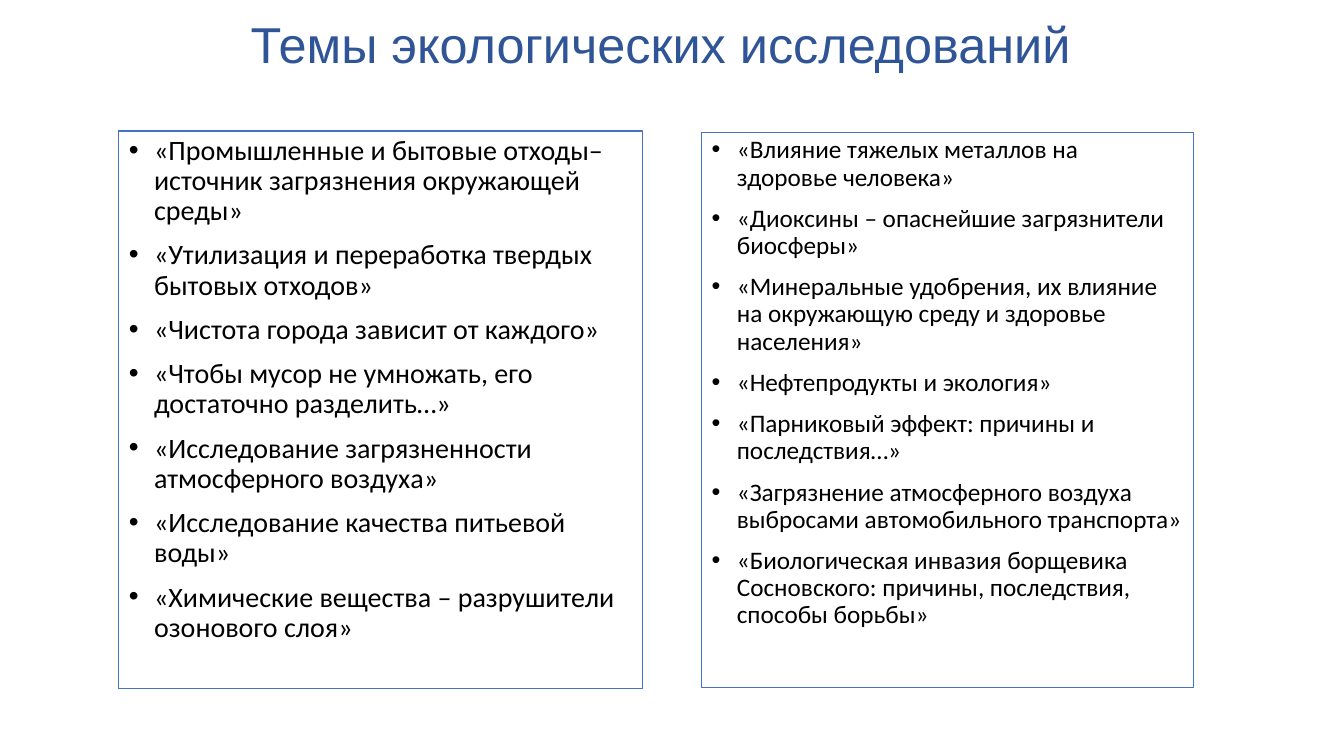
from lxml.etree import SubElement
from pptx import Presentation
from pptx.dml.color import RGBColor
from pptx.enum.text import MSO_ANCHOR as Anchor, PP_ALIGN as Align
from pptx.oxml.ns import qn
from pptx.util import Inches, Pt

WASTE_TOPICS = [
    "«Промышленные и бытовые отходы– источник загрязнения окружающей среды»",
    "«Утилизация и переработка твердых бытовых отходов»",
    "«Чистота города зависит от каждого»",
    "«Чтобы мусор не умножать, его достаточно разделить…»",
    "«Исследование загрязненности атмосферного воздуха»",
    "«Исследование качества питьевой воды»",
    "«Химические вещества – разрушители озонового слоя»",
]
POLLUTION_TOPICS = [
    "«Влияние тяжелых металлов на здоровье человека»",
    "«Диоксины – опаснейшие загрязнители биосферы»",
    "«Минеральные удобрения, их влияние на окружающую среду и здоровье населения»",
    "«Нефтепродукты и экология»",
    "«Парниковый эффект: причины и последствия…»",
    "«Загрязнение атмосферного воздуха выбросами автомобильного транспорта»",
    "«Биологическая инвазия борщевика Сосновского: причины, последствия, способы борьбы»",
]


def color(hex_code):
    """Turn a hex string into a colour."""
    return RGBColor.from_string(hex_code)


def add_text(paragraph, text, font_name, size, hex_code):
    """Add one styled run to a paragraph."""
    run = paragraph.add_run()
    run.text = text
    run.font.name = font_name
    run.font.size = Pt(size)
    run.font.color.rgb = color(hex_code)


def add_bullet(paragraph, indent):
    """Give a paragraph a hanging round bullet."""
    properties = paragraph._p.get_or_add_pPr()
    properties.set("marL", str(Inches(indent)))
    properties.set("indent", str(-Inches(indent)))
    SubElement(properties, qn("a:buFont")).set("typeface", "Arial")
    SubElement(properties, qn("a:buChar")).set("char", "•")


def add_heading(slide, left, top, width, height):
    """Place the centred slide heading in the given box."""
    heading = slide.shapes.add_textbox(*map(Inches, (left, top, width, height)))
    frame = heading.text_frame
    frame.word_wrap = True
    frame.vertical_anchor = Anchor.MIDDLE
    line = frame.paragraphs[0]
    line.alignment = Align.CENTER
    line.line_spacing = 0.9
    add_text(line, "Темы экологических исследований", "Arial", 36, "2F5597")


def add_topic_list(slide, left, top, width, height, topics, size):
    """Place an outlined list of research topics in the given box."""
    panel = slide.shapes.add_textbox(*map(Inches, (left, top, width, height)))
    panel.line.color.rgb = color("4472C4")
    panel.line.width = Pt(0.75)
    frame = panel.text_frame
    frame.word_wrap = True
    for index, topic in enumerate(topics):
        item = frame.add_paragraph() if index else frame.paragraphs[0]
        item.line_spacing = 0.9
        item.space_before = Pt(10 if index else 0)
        add_bullet(item, 0.25)
        add_text(item, topic, "Calibri", size, "000000")


def main():
    """Build the slide and save it."""
    deck = Presentation()
    deck.slide_width, deck.slide_height = Inches(13.33), Inches(7.5)
    slide = deck.slides.add_slide(deck.slide_layouts[6])
    add_heading(slide, 1.87, 0.12, 9.37, 0.7)
    add_topic_list(slide, 1.18, 1.3, 5.19, 5.53, WASTE_TOPICS, 20)
    add_topic_list(slide, 6.96, 1.31, 4.88, 5.51, POLLUTION_TOPICS, 18)
    deck.save("out.pptx")


if __name__ == "__main__":
    main()
